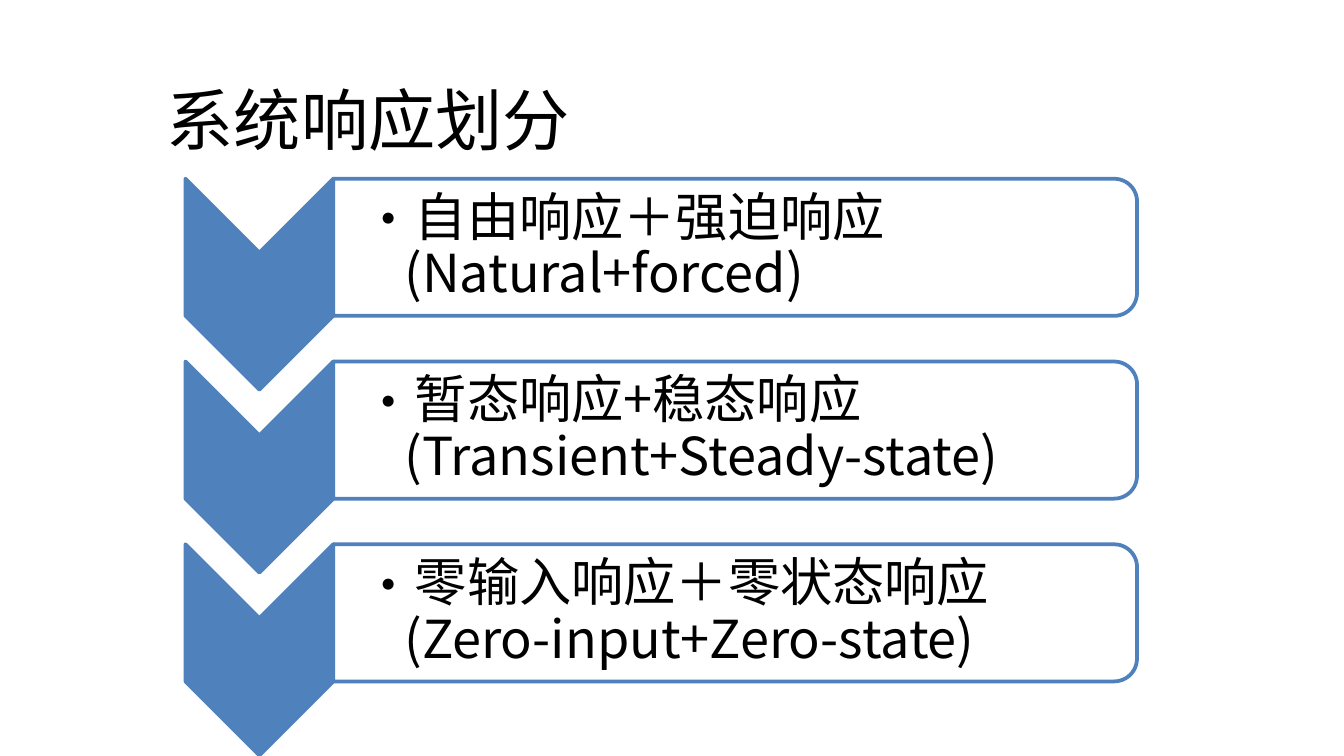
import pptx
import pptx.util
import pptx.dml.color
import pptx.enum.shapes
import pptx.enum.text
import pptx.oxml.ns
import lxml.etree

Inches = pptx.util.Inches
Pt = pptx.util.Pt
RGBColor = pptx.dml.color.RGBColor
Shape = pptx.enum.shapes.MSO_SHAPE
Anchor = pptx.enum.text.MSO_ANCHOR
qn = pptx.oxml.ns.qn

BLUE = RGBColor(0x4F, 0x81, 0xBD)
WHITE = RGBColor(0xFF, 0xFF, 0xFF)
BLACK = RGBColor(0, 0, 0)
FONT = "Noto Sans CJK SC"

ROWS = [
    "自由响应＋强迫响应 (Natural+forced)",
    "暂态响应+稳态响应(Transient+Steady-state)",
    "零输入响应＋零状态响应(Zero-input+Zero-state)",
]


def add_run(para, text, size):
    run = para.add_run()
    run.text = text
    run.font.size = Pt(size)
    run.font.name = FONT
    run.font.color.rgb = BLACK
    east = lxml.etree.SubElement(run.font._element, qn("a:ea"))
    east.set("typeface", FONT)


def add_turned(slide, kind, box, fill):
    left, top, width, height = box
    shape = slide.shapes.add_shape(
        kind,
        Inches(left + (width - height) / 2),
        Inches(top + (height - width) / 2),
        Inches(height),
        Inches(width),
    )
    shape.rotation = 90
    shape.shadow.inherit = False
    shape.fill.solid()
    shape.fill.fore_color.rgb = fill
    shape.line.color.rgb = BLUE
    shape.line.width = Pt(2)
    return shape


def add_title(slide, left, top, width, height):
    title = slide.shapes.title
    title.left, title.top = Inches(left), Inches(top)
    title.width, title.height = Inches(width), Inches(height)
    frame = title.text_frame
    frame.word_wrap = False
    frame.auto_size = pptx.enum.text.MSO_AUTO_SIZE.SHAPE_TO_FIT_TEXT
    frame.vertical_anchor = Anchor.TOP
    para = frame.paragraphs[0]
    para.alignment = pptx.enum.text.PP_ALIGN.LEFT
    add_run(para, "系统响应划分", 36)


def add_label(slide, left, top, width, height, text):
    label = slide.shapes.add_textbox(
        Inches(left), Inches(top), Inches(width), Inches(height))
    frame = label.text_frame
    frame.word_wrap = True
    frame.vertical_anchor = Anchor.MIDDLE
    frame.margin_left = Inches(0.22)
    frame.margin_right = Inches(0.02)
    frame.margin_top = frame.margin_bottom = Inches(0.02)
    para = frame.paragraphs[0]
    props = para._p.get_or_add_pPr()
    props.set("marL", str(Inches(0.31)))
    props.set("indent", str(-Inches(0.31)))
    lxml.etree.SubElement(props, qn("a:buFont")).set("typeface", FONT)
    lxml.etree.SubElement(props, qn("a:buChar")).set("char", "•")
    para.level = 1
    para.line_spacing = 0.9
    add_run(para, text, 28)


def add_row(slide, left, top, width, text):
    arrow = 1.1
    add_turned(slide, Shape.CHEVRON, (left, top, arrow, 1.57), BLUE)
    edge = left + arrow
    panel = add_turned(slide, Shape.ROUND_2_SAME_RECTANGLE,
                       (edge, top, width - arrow, 1.02), WHITE)
    color = panel.fill._xPr.find(".//" + qn("a:srgbClr"))
    lxml.etree.SubElement(color, qn("a:alpha")).set("val", "90000")
    add_label(slide, edge, top + 0.05, width - arrow - 0.05, 0.92, text)


def main():
    deck = pptx.Presentation()
    deck.slide_width = Inches(10)
    deck.slide_height = deck.slide_width * 9 // 16
    slide = deck.slides.add_slide(deck.slide_layouts[5])
    add_title(slide, 1.14, 0.53, 3.21, 0.7)
    for row, text in enumerate(ROWS):
        add_row(slide, 1.38, 1.33 + 1.36 * row, 7.08, text)
    deck.save("out.pptx")


if __name__ == "__main__":
    main()
